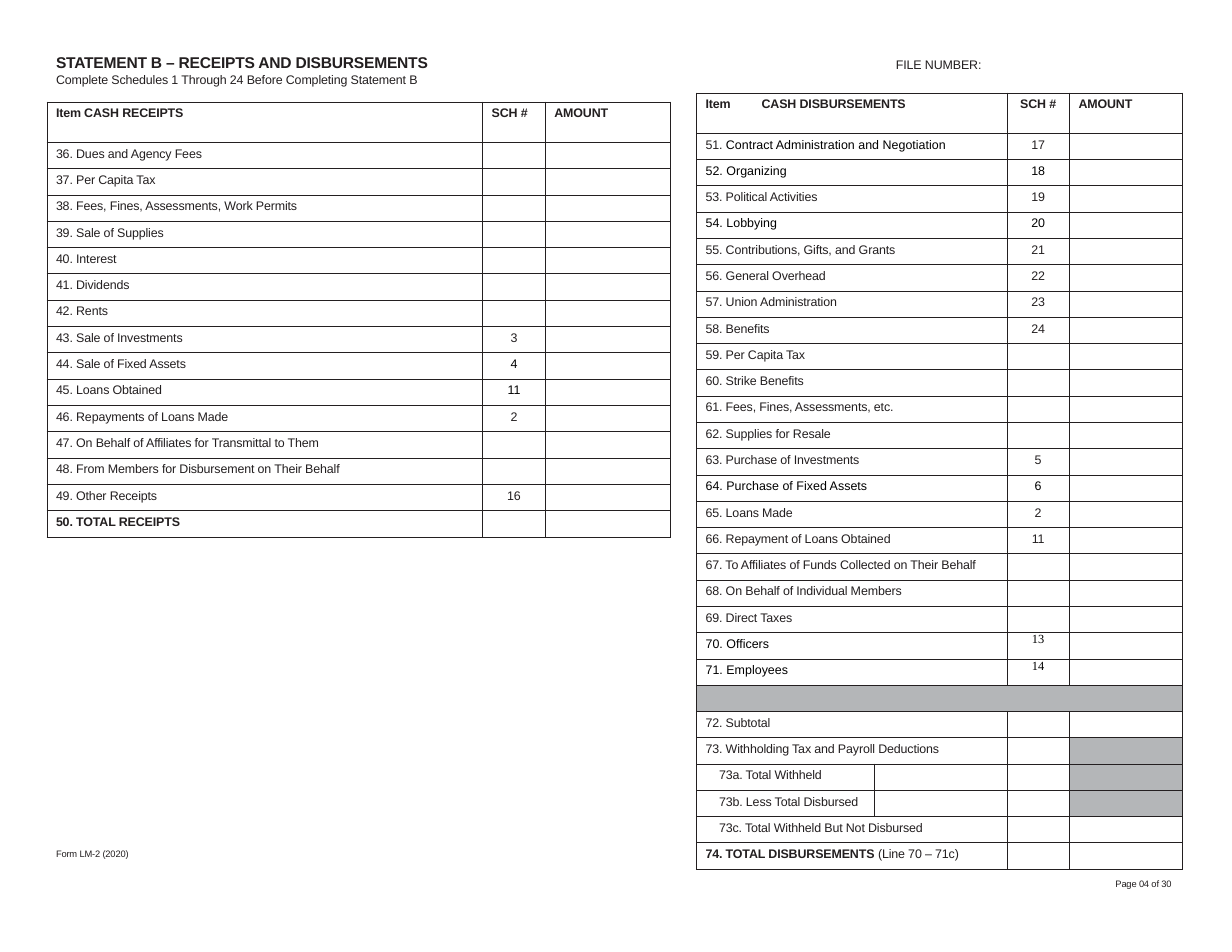
import pptx
import pptx.dml.color
import pptx.enum.text
import pptx.oxml.ns
import pptx.util
from lxml import etree

Pt = pptx.util.Pt
Inches = pptx.util.Inches
qn = pptx.oxml.ns.qn
ALIGN = pptx.enum.text.PP_ALIGN
INK, BLACK, GREY = "231F20", "000000", "B4B6B8"
HEADER_ROWS = 3.6

RECEIPTS = [
    ("Dues and Agency Fees", ""), ("Per Capita Tax", ""),
    ("Fees, Fines, Assessments, Work Permits", ""),
    ("Sale of Supplies", ""), ("Interest", ""), ("Dividends", ""),
    ("Rents", ""), ("Sale of Investments", "3"),
    ("Sale of Fixed Assets", "4"), ("Loans Obtained", "11"),
    ("Repayments of Loans Made", "2"),
    ("On Behalf of Affiliates for Transmittal to Them", ""),
    ("From Members for Disbursement on Their Behalf", ""),
    ("Other Receipts", "16"), ("TOTAL RECEIPTS", ""),
]
DISBURSEMENTS = [
    ("Contract Administration and Negotiation", "17"),
    ("Organizing", "18"), ("Political Activities", "19"),
    ("Lobbying", "20"), ("Contributions, Gifts, and Grants", "21"),
    ("General Overhead", "22"), ("Union Administration", "23"),
    ("Benefits", "24"), ("Per Capita Tax", ""), ("Strike Benefits", ""),
    ("Fees, Fines, Assessments, etc.", ""), ("Supplies for Resale", ""),
    ("Purchase of Investments", "5"), ("Purchase of Fixed Assets", "6"),
    ("Loans Made", "2"), ("Repayment of Loans Obtained", "11"),
    ("To Affiliates of Funds Collected on Their Behalf", ""),
    ("On Behalf of Individual Members", ""), ("Direct Taxes", ""),
    ("Officers", "13"), ("Employees", "14"),
]
BLACK_ITEMS = {52, 54, 64, 70, 71}
BLACK_RECEIPT_SCHEDULES = {44, 45}
WITHHOLDING = [
    "73a. Total Withheld", "73b. Less Total Disbursed",
    "73c. Total Withheld But Not Disbursed",
]


def rgb(value):
    return pptx.dml.color.RGBColor.from_string(value)


class Form:
    def __init__(self, prs):
        self.unit = prs.slide_width / 110
        self.s = prs.slides.add_slide(prs.slide_layouts[5])

    def grid(self, *lengths):
        return [round(n * self.unit) for n in lengths]

    def run(self, p, text, size=8, bold=False, color=INK, font="Arial"):
        r = p.add_run()
        r.text = text
        r.font.size, r.font.bold, r.font.name = Pt(size), bold, font
        r.font.color.rgb = rgb(color)
        r.font._element.set("spc", "-10" if color == INK else "0")

    def paragraph(self, p, before=0, indent=0.01, align=ALIGN.LEFT):
        p.alignment, p.space_before = align, Pt(before)
        pPr = p._p.get_or_add_pPr()
        pPr.set("marL", str(Inches(indent)))
        pPr.set("indent", "0")
        return p

    def frame(self, tf):
        tf.word_wrap = True
        tf.auto_size = pptx.enum.text.MSO_AUTO_SIZE.NONE
        tf.vertical_anchor = pptx.enum.text.MSO_ANCHOR.TOP
        tf.margin_left = tf.margin_right = tf.margin_bottom = 0
        tf.margin_top = Inches(0.01)
        return tf

    def title(self, box, heading, subtitle):
        sp = self.s.shapes.title
        sp.left, sp.top, sp.width, sp.height = self.grid(*box)
        tf = self.frame(sp.text_frame)
        p = self.paragraph(tf.paragraphs[0], 0.9)
        p.line_spacing = Pt(11.8)
        self.run(p, heading, 10, True)
        p = self.paragraph(tf.add_paragraph())
        p.line_spacing = Pt(9.4)
        self.run(p, subtitle)

    def label(self, box, text, size):
        sp = self.s.shapes.add_textbox(*self.grid(*box))
        p = self.paragraph(self.frame(sp.text_frame).paragraphs[0], 0.4)
        self.run(p, text, size)

    def table(self, box, columns, row_count):
        x, y, w, h = self.grid(*box)
        tbl = self.s.shapes.add_table(row_count, len(columns), x, y, w, h).table
        tbl.first_row = tbl.horz_banding = False
        for column, width in zip(tbl.columns, self.grid(*columns)):
            column.width = width
        header, body = self.grid(
            HEADER_ROWS, (box[3] - HEADER_ROWS) / (row_count - 1))
        for i, row in enumerate(tbl.rows):
            row.height = body if i else header
        for c in tbl.iter_cells():
            c.margin_left = c.margin_right = c.margin_bottom = 0
            c.margin_top = Inches(0.04)
            c.fill.background()
            self.border(c)
            end = etree.SubElement(
                c.text_frame.paragraphs[0]._p, qn("a:endParaRPr"))
            end.set("sz", "800")
        return tbl

    def border(self, c):
        tcPr = c._tc.get_or_add_tcPr()
        for i, side in enumerate(("lnL", "lnR", "lnT", "lnB")):
            ln = etree.Element(qn("a:" + side), w=str(Pt(0.5)))
            fill = etree.SubElement(ln, qn("a:solidFill"))
            etree.SubElement(fill, qn("a:srgbClr"), val=INK)
            tcPr.insert(i, ln)

    def cell(self, c, text, indent=0.08, align=ALIGN.LEFT, **style):
        p = self.paragraph(c.text_frame.paragraphs[0], 3.1, indent, align)
        self.run(p, text, **style)
        return p

    def schedule(self, c, text, **style):
        return self.cell(c, text, 0, ALIGN.CENTER, **style)

    def shade(self, c):
        c.fill.solid()
        c.fill.fore_color.rgb = rgb(GREY)

    def receipts(self):
        tbl = self.table((4.2, 9.1, 55.7, 38.9), (38.9, 5.6, 11.2),
                         len(RECEIPTS) + 1)
        for i, text in enumerate(("Item CASH RECEIPTS", "SCH #", "AMOUNT")):
            self.cell(tbl.cell(0, i), text, bold=True)
        for row, (name, sch) in enumerate(RECEIPTS, 1):
            item = 35 + row
            self.cell(tbl.cell(row, 0), f"{item}. {name}",
                      bold=row == len(RECEIPTS))
            if sch:
                color = BLACK if item in BLACK_RECEIPT_SCHEDULES else INK
                self.schedule(tbl.cell(row, 1), sch, color=color)

    def disbursements(self):
        tbl = self.table((62.2, 8.3, 43.4, 69.4), (15.9, 11.8, 5.6, 10.1), 29)
        grey_row = len(DISBURSEMENTS) + 1
        subtotal, withholding, total = grey_row + 1, grey_row + 2, 28
        split_rows = (withholding + 1, withholding + 2)
        for row in range(29):
            if row == grey_row:
                tbl.cell(row, 0).merge(tbl.cell(row, 3))
            elif row not in split_rows:
                tbl.cell(row, 0).merge(tbl.cell(row, 1))

        p = self.cell(tbl.cell(0, 0), "Item\tCASH DISBURSEMENTS", bold=True)
        tabs = etree.SubElement(p._p.get_or_add_pPr(), qn("a:tabLst"))
        etree.SubElement(tabs, qn("a:tab"), pos=str(Inches(0.56)), algn="l")
        self.schedule(tbl.cell(0, 2), "SCH #", bold=True)
        self.cell(tbl.cell(0, 3), "AMOUNT", bold=True)

        for row, (name, sch) in enumerate(DISBURSEMENTS, 1):
            item = 50 + row
            color = BLACK if item in BLACK_ITEMS else INK
            p = self.cell(tbl.cell(row, 0), f"{item}. ", color=color)
            self.run(p, name, color=BLACK if item == 51 else color)
            if item >= 70:
                c = tbl.cell(row, 2)
                c.margin_top = 0
                p = self.schedule(c, sch, color=color, font="Times New Roman")
                p.space_before = Pt(0)
            elif sch:
                self.schedule(tbl.cell(row, 2), sch, color=color)

        self.cell(tbl.cell(subtotal, 0), "72. Subtotal")
        self.cell(tbl.cell(withholding, 0),
                  "73. Withholding Tax and Payroll Deductions")
        for row, text in enumerate(WITHHOLDING, withholding + 1):
            self.cell(tbl.cell(row, 0), text, 0.2)
        p = self.cell(tbl.cell(total, 0), "74. TOTAL DISBURSEMENTS ", bold=True)
        self.run(p, "(Line 70 – 71c)")
        self.shade(tbl.cell(grey_row, 0))
        for row in (withholding, *split_rows):
            self.shade(tbl.cell(row, 3))


def main():
    prs = pptx.Presentation()
    prs.slide_width, prs.slide_height = Inches(11), Inches(8.5)
    form = Form(prs)
    form.title((4.9, 4.7, 36, 3.1), "STATEMENT B – RECEIPTS AND DISBURSEMENTS",
               "Complete Schedules 1 Through 24 Before Completing Statement B")
    form.label((79.9, 5, 9, 1.6), "FILE NUMBER:", 8)
    form.receipts()
    form.disbursements()
    form.label((4.9, 75.6, 18.1, 1.1), "Form LM-2 (2020)", 6)
    form.label((99.5, 78.3, 6.4, 1.1), "Page 04 of 30", 6)
    prs.save("out.pptx")


if __name__ == "__main__":
    main()
